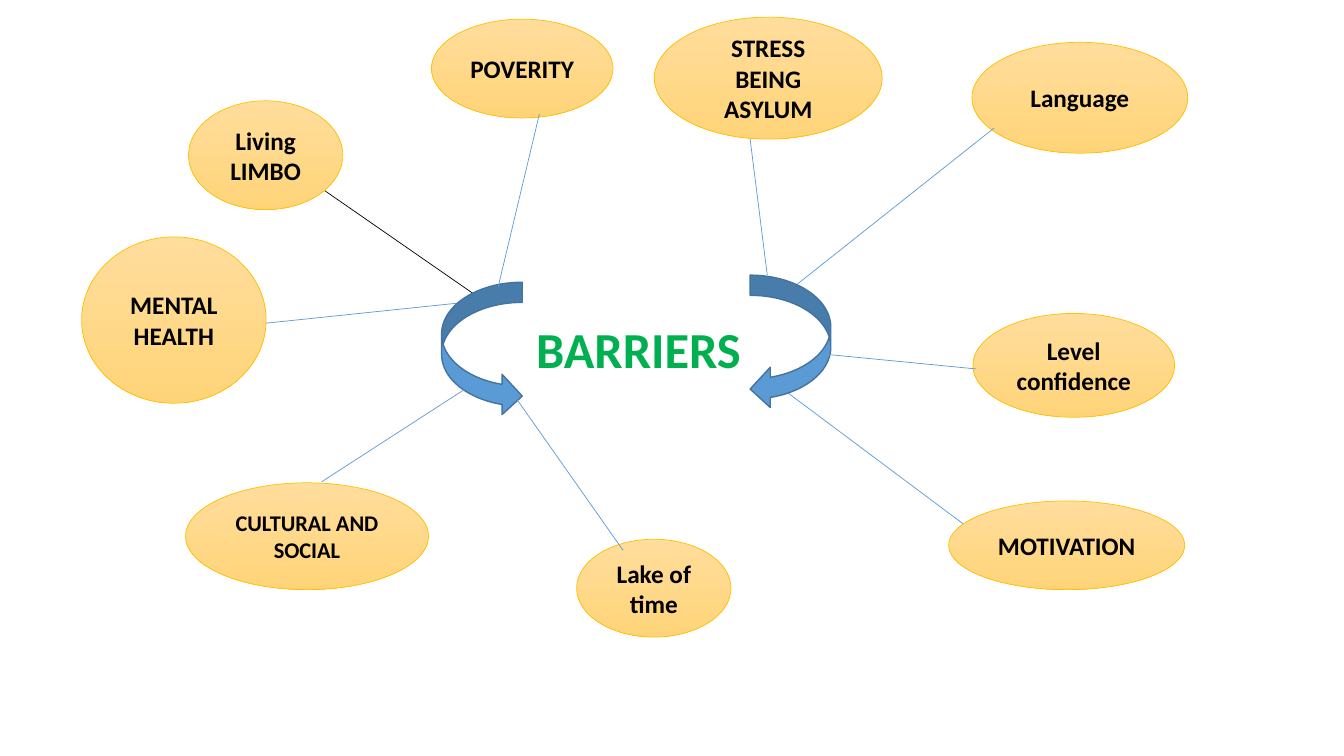
import pptx
import pptx.util
import pptx.dml.color
import pptx.enum.shapes
import pptx.enum.text
import pptx.oxml.ns
import lxml.etree
from dataclasses import dataclass

PX = 9144  # EMU per px, 100 px to the inch
SHAPE = pptx.enum.shapes.MSO_SHAPE
ALIGN = pptx.enum.text.PP_ALIGN


@dataclass(frozen=True)
class Theme:
    font: str = "Calibri"
    label: int = 18
    small_label: int = 16
    title: int = 36
    thin: float = 0.5
    outline: float = 1
    ink: str = "000000"
    green: str = "00B050"
    blue: str = "5B9BD5"
    dark_blue: str = "43739E"
    gold: str = "FFC000"
    gold_light: str = "FFDD9C"
    gold_deep: str = "FFD479"


THEME = Theme()

# text lines, (left, top, width, height), type size
FACTORS = [
    (["Living LIMBO"], (187, 100, 153, 108), THEME.label),
    (["Level confidence"], (965, 311, 200, 103), THEME.label),
    (["STRESS", "BEING ASYLUM"], (649, 17, 226, 121), THEME.label),
    (["Language"], (964, 42, 214, 110), THEME.label),
    (["Lake of time"], (572, 535, 153, 97), THEME.label),
    (["POVERITY"], (428, 19, 180, 98), THEME.label),
    (["MOTIVATION"], (941, 497, 234, 88), THEME.label),
    (["MENTAL HEALTH"], (81, 235, 183, 165), THEME.label),
    (["CULTURAL AND SOCIAL"], (184, 479, 241, 106), THEME.small_label),
]

# (from, to, colour)
SPOKES_BEHIND_FACTORS = [
    ((767, 379), (965, 527), THEME.blue),
    ((293, 169), (469, 291), THEME.ink),
    ((461, 300), (241, 323), THEME.blue),
]
SPOKES_BEHIND_HUB = [((773, 296), (986, 127), THEME.blue)]
SPOKES_IN_FRONT = [
    ((535, 113), (494, 285), THEME.blue),
    ((968, 366), (814, 351), THEME.blue),
    ((319, 478), (469, 381), THEME.blue),
    ((618, 546), (509, 391), THEME.blue),
    ((744, 138), (761, 273), THEME.blue),
]


def rgb(value):
    return pptx.dml.color.RGBColor.from_string(value)


def place(box, part):
    """Turn a part given relative to box into EMU."""
    left, top, width, height = part
    return [PX * v for v in (box[0] + left, box[1] + top, width, height)]


def set_line(sp, color, width):
    sp.line.color.rgb = rgb(color)
    sp.line.width = pptx.util.Pt(width)


def write(tf, lines, size, color, align):
    for i, text in enumerate(lines):
        p = tf.paragraphs[0] if i == 0 else tf.add_paragraph()
        p.alignment = align
        r = p.add_run()
        r.text = text
        style = {"name": THEME.font, "size": pptx.util.Pt(size), "bold": True}
        for name, value in style.items():
            setattr(r.font, name, value)
        r.font.color.rgb = rgb(color)


def add_spokes(s, box, spokes):
    left, top = box[:2]
    for (x1, y1), (x2, y2), color in spokes:
        ends = (left + x1, top + y1, left + x2, top + y2)
        sp = s.shapes.add_connector(
            pptx.enum.shapes.MSO_CONNECTOR.STRAIGHT, *[PX * v for v in ends])
        set_line(sp, color, THEME.thin)
        lxml.etree.SubElement(
            sp._element.spPr, pptx.oxml.ns.qn("a:effectLst"))


def add_factors(s, box):
    for lines, part, size in FACTORS:
        sp = s.shapes.add_shape(SHAPE.OVAL, *place(box, part))
        sp.shadow.inherit = False
        sp.fill.gradient()
        sp.fill.gradient_angle = 270
        stops = sp.fill.gradient_stops
        for stop, color in zip(stops, (THEME.gold_light, THEME.gold_deep)):
            stop.color.rgb = rgb(color)
        set_line(sp, THEME.gold, THEME.thin)
        tf = sp.text_frame
        tf.word_wrap = True
        tf.vertical_anchor = pptx.enum.text.MSO_ANCHOR.MIDDLE
        write(tf, lines, size, THEME.ink, ALIGN.CENTER)


def add_hub_arrows(s, box):
    arrows = [
        (SHAPE.CURVED_LEFT_ARROW, (306, 0, 80, 133)),
        (SHAPE.CURVED_RIGHT_ARROW, (0, 7, 80, 133)),
    ]
    for kind, part in arrows:
        sp = s.shapes.add_shape(kind, *place(box, part))
        sp.shadow.inherit = False
        sp.fill.solid()
        sp.fill.fore_color.rgb = rgb(THEME.blue)
        set_line(sp, THEME.dark_blue, THEME.outline)


def add_hub_title(s, box):
    sp = s.shapes.add_textbox(*place(box, (84, 38, 282, 71)))
    sp.text_frame.word_wrap = True
    write(sp.text_frame, ["BARRIERS"], THEME.title, THEME.green, ALIGN.LEFT)


def add_barriers_diagram(s, box):
    """Layer the spokes, factors and hub from back to front."""
    hub = (box[0] + 438, box[1] + 273, 386, 140)
    add_spokes(s, box, SPOKES_BEHIND_FACTORS)
    add_factors(s, box)
    add_spokes(s, box, SPOKES_BEHIND_HUB)
    add_hub_arrows(s, hub)
    add_spokes(s, box, SPOKES_IN_FRONT)
    add_hub_title(s, hub)


def main():
    prs = pptx.Presentation()
    width, height = 1333, 750
    prs.slide_width, prs.slide_height = PX * width, PX * height
    s = prs.slides.add_slide(prs.slide_layouts[6])
    add_barriers_diagram(s, (0, 0, width, height))
    prs.save("out.pptx")


if __name__ == "__main__":
    main()
